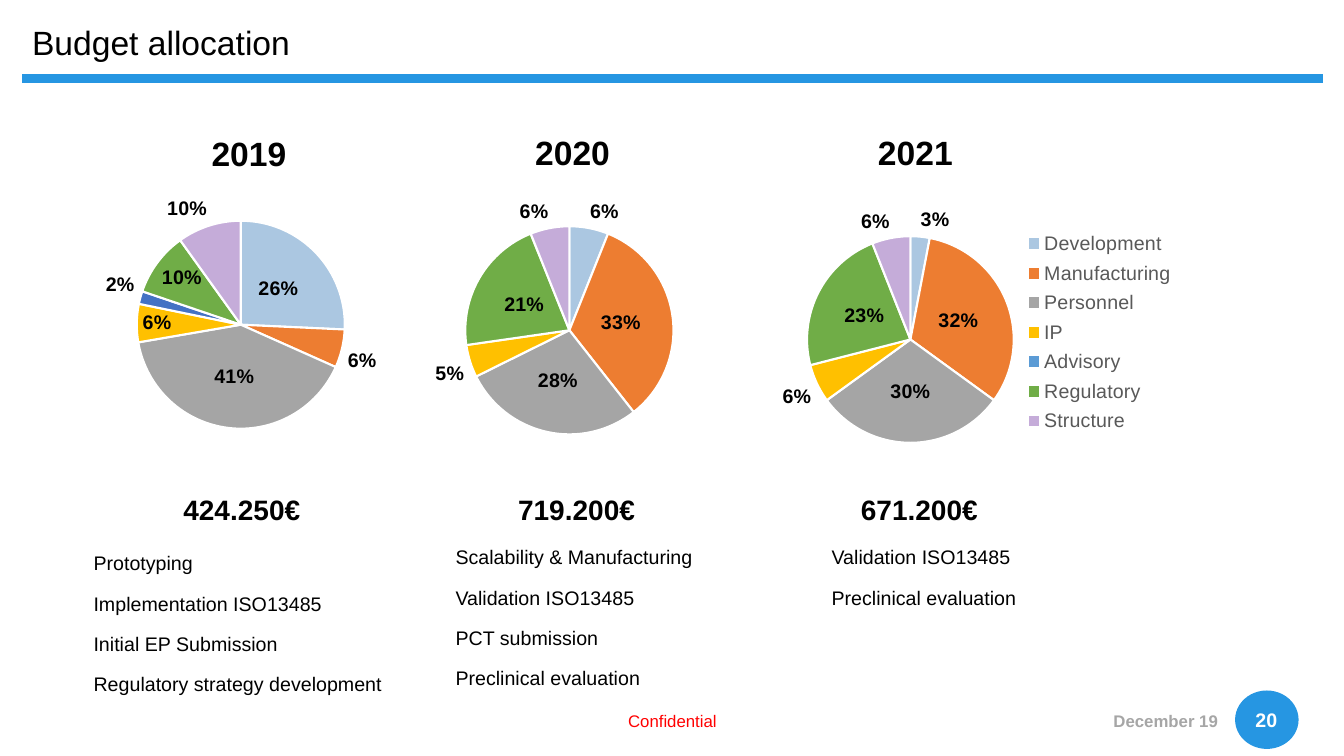
import pptx
import pptx.chart.data
import pptx.dml.color
import pptx.enum.chart
import pptx.enum.shapes
import pptx.enum.text
import pptx.oxml
import pptx.oxml.ns
import pptx.util
from pptx.util import Inches

hues = {"blue": "2696E2", "black": "000000", "gray": "A6A6A6", "red": "FF0000",
        "white": "FFFFFF", "key": "595959"}
# Slice name: colour and opacity in percent
kinds = {"Development": ("2E75B6", 40), "Manufacturing": ("ED7D31", 100),
         "Personnel": ("A5A5A5", 100), "IP": ("FFC000", 100),
         "Advisory": ("5B9BD5", 100), "Regulatory": ("70AD47", 100),
         "Structure": ("7030A0", 40)}
spots = {"c": pptx.enum.chart.XL_LABEL_POSITION.CENTER,
         "i": pptx.enum.chart.XL_LABEL_POSITION.INSIDE_END,
         "o": pptx.enum.chart.XL_LABEL_POSITION.OUTSIDE_END}
sides = {"l": pptx.enum.text.PP_ALIGN.LEFT, "c": pptx.enum.text.PP_ALIGN.CENTER,
         "r": pptx.enum.text.PP_ALIGN.RIGHT}
rgb = pptx.dml.color.RGBColor.from_string

deck = pptx.Presentation()
deck.slide_width, deck.slide_height = Inches(13.33), Inches(7.5)
slide = deck.slides.add_slide(deck.slide_layouts[6])


def write(text, x, y, w, h, size=14, hue="black", bold=False, side="l", mid=True):
    box = slide.shapes.add_textbox(Inches(x), Inches(y), Inches(w), Inches(h))
    frame = box.text_frame
    frame.word_wrap = True
    anchor = pptx.enum.text.MSO_ANCHOR
    frame.vertical_anchor = anchor.MIDDLE if mid else anchor.TOP
    para = frame.paragraphs[0]
    para.text = text
    para.alignment = sides[side]
    font = para.runs[0].font
    font.name, font.size, font.bold = "Arial", pptx.util.Pt(size), bold
    font.color.rgb = rgb(hues[hue])


def place(x, y, w, h, inner=False):
    target = '<c:layoutTarget val="inner"/>' if inner else ""
    return pptx.oxml.parse_xml(
        f'<c:layout {pptx.oxml.ns.nsdecls("c")}><c:manualLayout>{target}'
        '<c:xMode val="edge"/><c:yMode val="edge"/>'
        f'<c:x val="{x}"/><c:y val="{y}"/><c:w val="{w}"/><c:h val="{h}"/>'
        '</c:manualLayout></c:layout>')


# Title and rule
rule = slide.shapes.add_connector(pptx.enum.shapes.MSO_CONNECTOR.STRAIGHT,
                                  Inches(0.22), Inches(0.78), Inches(13.12), Inches(0.78))
rule.line.color.rgb = rgb(hues["blue"])
rule.line.width = pptx.util.Pt(6)
rule._element.spPr.append(pptx.oxml.parse_xml(
    f'<a:effectLst {pptx.oxml.ns.nsdecls("a")}/>'))
write("Budget allocation", 0.22, 0.06, 9.46, 0.71, size=24)

# Footer
disc = slide.shapes.add_shape(pptx.enum.shapes.MSO_SHAPE.OVAL,
                              Inches(12.25), Inches(6.85), Inches(0.63), Inches(0.58))
disc.shadow.inherit = False
disc.fill.solid()
disc.fill.fore_color.rgb = rgb(hues["blue"])
disc.line.fill.background()
write("December 19", 9.18, 6.95, 3, 0.4, size=12, hue="gray", bold=True, side="r")
write("Confidential", 4.42, 6.95, 4.5, 0.4, size=12, hue="red", side="c")
write("20", 12.28, 6.94, 0.56, 0.4, hue="white", bold=True, side="c")

# One column a year: texts with their places, chart box, plot box, values and
# label spots (c centre, i inside end, o outside end)
years = [
    dict(year="2019", head=(2, 1.27), sum="424.250€", foot=1.72, list=(0.83, 5.42),
         tasks=["Prototyping", "Implementation ISO13485", "Initial EP Submission",
                "Regulatory strategy development"],
         left=0.32, wide=4.89, plot=(0.212, 0.144, 0.422, 0.71),
         vals=[26, 6, 41, 6, 2, 10, 10], spots="cocioio"),
    dict(year="2020", head=(5.21, 1.26), sum="719.200€", foot=5.04, list=(4.42, 5.36),
         tasks=["Scalability & Manufacturing", "Validation ISO13485", "PCT submission",
                "Preclinical evaluation"],
         left=3.37, wide=5, plot=(0.249, 0.163, 0.413, 0.71),
         vals=[6, 33, 28, 5, 0, 21, 6], spots="occooco"),
    dict(year="2021", head=(8.61, 1.26), sum="671.200€", foot=8.44, list=(8.15, 5.36),
         tasks=["Validation ISO13485", "Preclinical evaluation"],
         left=6.73, wide=5, plot=(0.255, 0.197, 0.41, 0.705),
         vals=[3, 32, 30, 6, None, 23, 6], spots="occooco"),
]
for col in years:
    # Pie
    data = pptx.chart.data.CategoryChartData()
    data.categories = list(kinds)
    data.add_series("Series 1", col["vals"])
    chart = slide.shapes.add_chart(
        pptx.enum.chart.XL_CHART_TYPE.PIE, Inches(col["left"]), Inches(1.77),
        Inches(col["wide"]), Inches(2.91), data).chart
    chart.has_title = False
    chart.font.name, chart.font.size = "Calibri", pptx.util.Pt(10)
    pie = chart.plots[0]
    pie.vary_by_categories = True
    area = chart._chartSpace.chart.plotArea
    for old in area.findall(pptx.oxml.ns.qn("c:layout")):
        area.remove(old)
    area.insert(0, place(*col["plot"], inner=True))

    # Slices and their labels
    labels = pie.series[0].data_labels
    labels.show_percentage, labels.show_value = True, False
    labels.number_format, labels.number_format_is_linked = "0%", False
    fonts = [labels.font]
    for i, (kind, (hue, alpha)) in enumerate(kinds.items()):
        point = pie.series[0].points[i]
        fill = point.format.fill
        fill.solid()
        late = col["year"] != "2019" or kind != "Advisory"
        fill.fore_color.rgb = rgb(hue if late else "4472C4")
        if alpha < 100:
            tone = next(point.format.fill._xPr.iter(pptx.oxml.ns.qn("a:srgbClr")))
            tone.append(pptx.oxml.parse_xml(
                f'<a:alpha {pptx.oxml.ns.nsdecls("a")} val="{alpha * 1000}"/>'))
        point.format.line.color.rgb = rgb(hues["white"])
        point.format.line.width = pptx.util.Pt(1.5)
        if col["vals"][i] is not None:
            fonts.append(point.data_label.font)
            point.data_label.position = spots[col["spots"][i]]
    for font in fonts:
        font.name, font.size, font.bold = "Arial", pptx.util.Pt(14), True
        font.color.rgb = rgb(hues["black"])
    for tag, flag in (("c:showVal", "0"), ("c:showPercent", "1")):
        for node in area.iter(pptx.oxml.ns.qn(tag)):
            node.set("val", flag)

    # Legend beside the last pie
    chart.has_legend = col is years[-1]
    if chart.has_legend:
        key = chart.legend
        key.position = pptx.enum.chart.XL_LEGEND_POSITION.RIGHT
        key.include_in_layout = False
        key.font.name, key.font.size = "Arial", pptx.util.Pt(14)
        key.font.color.rgb = rgb(hues["key"])
        for old in key._element.findall(pptx.oxml.ns.qn("c:layout")):
            key._element.remove(old)
        key._element.insert(1, place(0.68, 0.16, 0.31, 0.73))

    # Year, total and tasks
    write(col["year"], *col["head"], 1.2, 0.5, size=24, bold=True, mid=False)
    write(col["sum"], col["foot"], 4.84, 1.6, 0.44, size=20, bold=True, mid=False)
    x, y = col["list"]
    for i, task in enumerate(col["tasks"]):
        write(task, x, y + 0.4 * i, 3.4, 0.34, mid=False)

deck.save("out.pptx")
